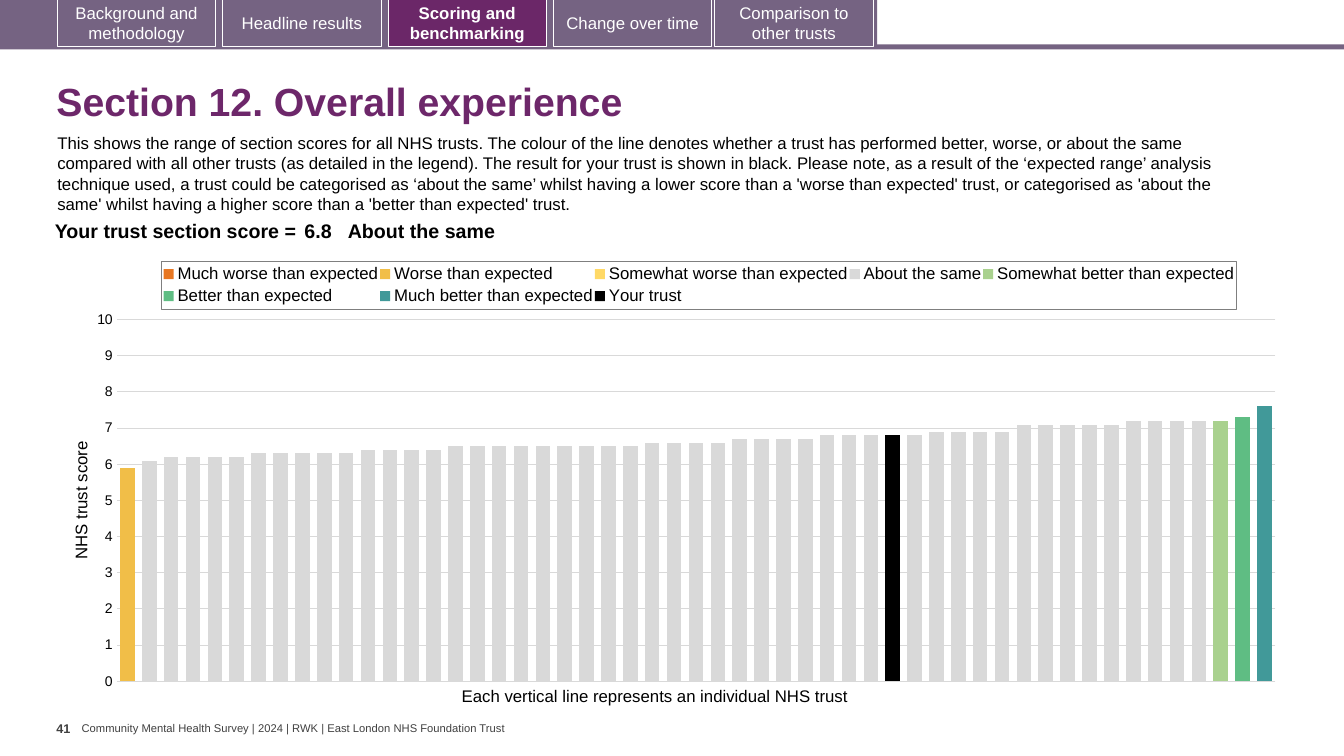
from lxml import etree
from pptx import Presentation
from pptx.chart import data as chart_data
from pptx.dml import color as dml_color
from pptx.enum import chart as chart_enum, shapes, text
from pptx.oxml import ns, parse_xml
from pptx.util import Inches, Pt

PURPLE, BAND, BLACK, WHITE, GREY = "6D276A", "756382", "000000", "FFFFFF", "404040"
TABS = [
    (0.57, "Background and methodology"),
    (2.21, "Headline results"),
    (3.85, "Scoring and benchmarking"),
    (5.49, "Change over time"),
    (7.09, "Comparison to other trusts"),
]
CURRENT_TAB = "Scoring and benchmarking"
INTRODUCTION = (
    "This shows the range of section scores for all NHS trusts. The colour of the line denotes "
    "whether a trust has performed better, worse, or about the same compared with all other trusts "
    "(as detailed in the legend). The result for your trust is shown in black. Please note, as a "
    "result of the ‘expected range’ analysis technique used, a trust could be categorised as "
    "‘about the same’ whilst having a lower score than a 'worse than expected' trust, or "
    "categorised as 'about the same' whilst having a higher score than a 'better than expected' trust."
)
TRUST_COUNT = 53
# Score and number of neighbouring trusts that share it
SAME_SCORES = [(6.1, 1), (6.2, 4), (6.3, 5), (6.4, 4), (6.5, 9), (6.6, 4), (6.7, 4),
               (6.8, 5), (6.9, 4), (7.1, 5), (7.2, 4)]
# Name, colour, position of the first bar, scores
SERIES = [
    ("Much worse than expected", "E87722", 0, []),
    ("Worse than expected", "F1BE48", 0, [5.9]),
    ("Somewhat worse than expected", "FFD966", 0, []),
    ("About the same", "D9D9D9", 1, [score for score, count in SAME_SCORES for _ in range(count)]),
    ("Somewhat better than expected", "A9D18E", 50, [7.2]),
    ("Better than expected", "5FBD83", 51, [7.3]),
    ("Much better than expected", "419999", 52, [7.6]),
    ("Your trust", BLACK, 35, [6.8]),
]
SECOND_AXES = """<c:axes {ns}>
<c:valAx><c:axId val="5001"/><c:scaling><c:orientation val="minMax"/><c:max val="10"/>
<c:min val="0"/></c:scaling><c:delete val="0"/><c:axPos val="r"/><c:majorTickMark val="none"/>
<c:minorTickMark val="none"/><c:tickLblPos val="none"/><c:spPr><a:ln><a:noFill/></a:ln></c:spPr>
<c:crossAx val="5002"/><c:crosses val="max"/></c:valAx>
<c:catAx><c:axId val="5002"/><c:scaling><c:orientation val="minMax"/></c:scaling>
<c:delete val="1"/><c:axPos val="b"/><c:crossAx val="5001"/><c:crosses val="autoZero"/></c:catAx>
</c:axes>"""
CHART_NS = ns.nsdecls("c", "a")


def rgb(value):
    return dml_color.RGBColor.from_string(value)


def manual_layout(left, top, width, height, inner=False):
    """Return a c:layout element given in fractions of the chart."""
    target = '<c:layoutTarget val="inner"/>' if inner else ""
    return parse_xml(
        f'<c:layout {CHART_NS}><c:manualLayout>{target}<c:xMode val="edge"/><c:yMode val="edge"/>'
        f'<c:x val="{left}"/><c:y val="{top}"/><c:w val="{width}"/><c:h val="{height}"/>'
        "</c:manualLayout></c:layout>")


def remove_layout(element):
    for layout in element.findall(ns.qn("c:layout")):
        element.remove(layout)


def move_to_second_axis(plot_area, bar_chart):
    """Put the last series of the bar chart on a hidden right-hand axis."""
    second = parse_xml(etree.tostring(bar_chart))
    for series in second.findall(ns.qn("c:ser"))[:-1]:
        second.remove(series)
    bar_chart.remove(bar_chart.findall(ns.qn("c:ser"))[-1])
    for axis_id, value in zip(second.findall(ns.qn("c:axId")), ("5002", "5001")):
        axis_id.set("val", value)
    bar_chart.addnext(second)
    last_axis = plot_area.findall(ns.qn("c:valAx"))[-1]
    for axis in reversed(list(parse_xml(SECOND_AXES.format(ns=CHART_NS)))):
        last_axis.addnext(axis)


class SlideBuilder:
    font_name = "Arial"

    def __init__(self, presentation):
        self.slide = presentation.slides.add_slide(presentation.slide_layouts[5])

    def style(self, font, size, color=BLACK, bold=False):
        font.name, font.size, font.bold = self.font_name, Pt(size), bold
        font.color.rgb = rgb(color)

    def fill_text(self, frame, content, size, color=BLACK, bold=False, align=text.PP_ALIGN.LEFT):
        frame.text = content
        paragraph = frame.paragraphs[0]
        paragraph.alignment = align
        self.style(paragraph.runs[0].font, size, color, bold)
        return paragraph

    def title(self, box, content):
        shape = self.slide.shapes.title
        shape.left, shape.top, shape.width, shape.height = map(Inches, box)
        frame = shape.text_frame
        frame.auto_size = text.MSO_AUTO_SIZE.NONE
        frame.vertical_anchor = text.MSO_ANCHOR.MIDDLE
        self.fill_text(frame, content, 28, PURPLE, True).line_spacing = 0.9

    def text_box(self, box, content, size, color=BLACK, bold=False, wrap=False, margins=(0.1, 0.05)):
        frame = self.slide.shapes.add_textbox(*map(Inches, box)).text_frame
        frame.word_wrap = wrap
        frame.margin_left = frame.margin_right = Inches(margins[0])
        frame.margin_top = frame.margin_bottom = Inches(margins[1])
        self.fill_text(frame, content, size, color, bold)

    def rectangle(self, box, fill, line=None):
        shape = self.slide.shapes.add_shape(shapes.MSO_SHAPE.RECTANGLE, *map(Inches, box))
        shape.shadow.inherit = False
        shape.fill.solid()
        shape.fill.fore_color.rgb = rgb(fill)
        if line:
            shape.line.color.rgb = rgb(line)
            shape.line.width = Pt(0.75)
        else:
            shape.line.fill.background()
        return shape

    def tab(self, left, label, current):
        shape = self.rectangle((left, -0.01, 1.57, 0.47), "6B2768" if current else BAND, WHITE)
        frame = shape.text_frame
        frame.word_wrap = True
        frame.vertical_anchor = text.MSO_ANCHOR.MIDDLE
        self.fill_text(frame, label, 12, WHITE, current, text.PP_ALIGN.CENTER)

    def score_table(self, box, columns):
        """Add a one-row table; columns hold width, text, alignment and side margin."""
        table = self.slide.shapes.add_table(1, len(columns), *map(Inches, box)).table
        table.first_row = table.horz_banding = False
        for index, (width, content, align, margin) in enumerate(columns):
            table.columns[index].width = Inches(width)
            cell = table.cell(0, index)
            cell.fill.background()
            cell.margin_left = cell.margin_right = Inches(margin)
            cell.margin_top = cell.margin_bottom = Inches(0.04)
            self.fill_text(cell.text_frame, content, 14, BLACK, True, align)

    def score_chart(self, box):
        data = chart_data.CategoryChartData(number_format="0.0")
        data.categories = [str(number + 1) for number in range(TRUST_COUNT)]
        for name, _, start, scores in SERIES:
            after = TRUST_COUNT - start - len(scores)
            data.add_series(name, [None] * start + scores + [None] * after)
        chart = self.slide.shapes.add_chart(
            chart_enum.XL_CHART_TYPE.COLUMN_CLUSTERED, *map(Inches, box), data).chart
        self.style(chart.font, 10)
        chart.has_title = False
        plot = chart.plots[0]
        plot.gap_width, plot.overlap, plot.vary_by_categories = 50, 100, False
        for series, (_, color, _, _) in zip(plot.series, SERIES):
            series.format.fill.solid()
            series.format.fill.fore_color.rgb = rgb(color)
        self.format_axes(chart)
        self.format_legend(chart)
        plot_area = chart._chartSpace.chart.plotArea
        remove_layout(plot_area)
        plot_area.insert(0, manual_layout(0.04, 0.158, 0.946, 0.808, inner=True))
        move_to_second_axis(plot_area, plot_area.find(ns.qn("c:barChart")))

    def format_axes(self, chart):
        chart.category_axis.visible = False
        axis = chart.value_axis
        axis.minimum_scale, axis.maximum_scale, axis.major_unit = 0, 10, 1
        axis.major_tick_mark = chart_enum.XL_TICK_MARK.NONE
        axis.tick_labels.number_format = "0"
        axis.tick_labels.number_format_is_linked = False
        self.style(axis.tick_labels.font, 10)
        axis.format.line.fill.background()
        axis.major_gridlines.format.line.color.rgb = rgb("D9D9D9")
        axis.major_gridlines.format.line.width = Pt(0.75)
        frame = axis.axis_title.text_frame
        self.fill_text(frame, "NHS trust score", 12, align=text.PP_ALIGN.CENTER)
        body = frame._txBody.find(ns.qn("a:bodyPr"))
        body.set("rot", "-5400000")
        body.set("vert", "horz")

    def format_legend(self, chart):
        chart.has_legend = True
        legend = chart.legend
        legend.position = chart_enum.XL_LEGEND_POSITION.TOP
        legend.include_in_layout = False
        self.style(legend.font, 12)
        remove_layout(legend._element)
        overlay = legend._element.find(ns.qn("c:overlay"))
        overlay.addprevious(manual_layout(0.077, 0.027, 0.877, 0.108))
        overlay.addnext(parse_xml(
            f'<c:spPr {CHART_NS}><a:ln w="9525"><a:solidFill><a:srgbClr val="7F7F7F"/>'
            "</a:solidFill></a:ln></c:spPr>"))


def main():
    presentation = Presentation()
    presentation.slide_width, presentation.slide_height = Inches(13.33), Inches(7.5)
    builder = SlideBuilder(presentation)
    builder.text_box((0.81, 7.16, 4.26, 0.13),
                     "Community Mental Health Survey | 2024 | RWK | East London NHS Foundation Trust",
                     8, GREY, margins=(0, 0))
    builder.rectangle((0, 0.44, 13.33, 0.05), BAND)
    builder.rectangle((0, 0, 8.7, 0.47), BAND)
    for left, label in TABS:
        builder.tab(left, label, label == CURRENT_TAB)
    builder.title((0.46, 0.67, 12.49, 0.72), "Section 12. Overall experience")
    builder.text_box((0.56, 7.1, 0.25, 0.4), "41", 9, GREY, True, margins=(0, 0.05))
    builder.text_box((0.47, 1.27, 12.13, 0.91), INTRODUCTION, 12, wrap=True)
    builder.text_box((4.48, 6.75, 4.11, 0.3),
                     "Each vertical line represents an individual NHS trust", 12)
    builder.score_chart((0.67, 2.47, 12.15, 4.44))
    builder.score_table((0.35, 2.15, 11.69, 0.31), [
        (2.63, "Your trust section score =", text.PP_ALIGN.RIGHT, 0.04),
        (0.47, "6.8", text.PP_ALIGN.LEFT, 0.04),
        (8.59, "About the same", text.PP_ALIGN.LEFT, 0),
    ])
    presentation.save("out.pptx")


if __name__ == "__main__":
    main()
